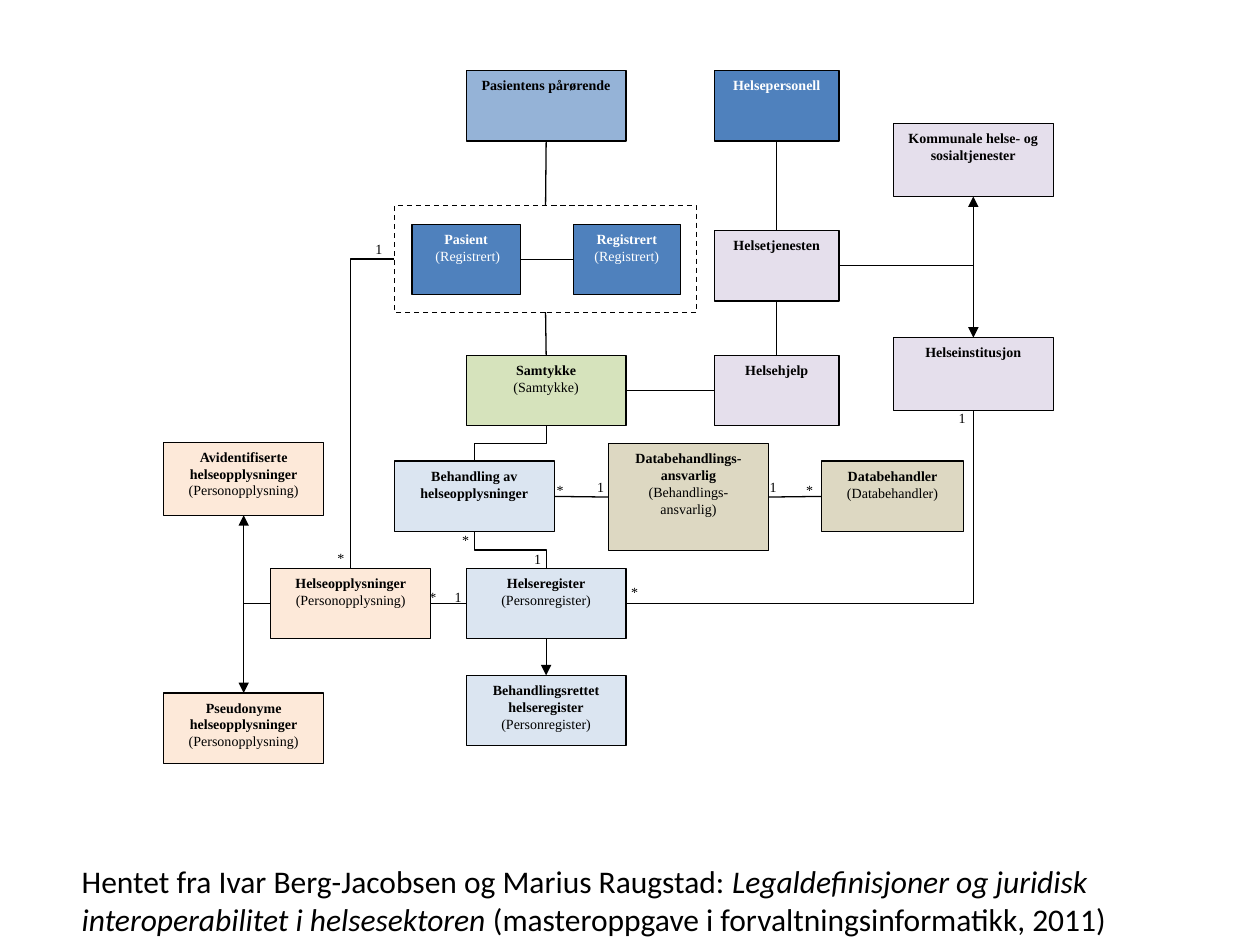
import pptx
import pptx.util
import pptx.dml.color
import pptx.enum.dml
import pptx.enum.shapes
import pptx.enum.text
import pptx.oxml
import pptx.oxml.ns

Inches = pptx.util.Inches
Pt = pptx.util.Pt
TOP, LEFT, BOTTOM, RIGHT = range(4)
COLORS = {
    "black": "000000", "white": "FFFFFF", "blue": "4F81BD", "sky": "95B3D7",
    "pale": "DBE5F1", "peach": "FDE9D9", "sand": "DDD8C2", "lilac": "E5DFEC",
    "green": "D6E3BC",
}
WIDE, MID, HIGH = 1.27, 0.99, 0.56

NODES = {
    "patient": (1.97, 1.22, 0.86, HIGH, "blue", "Pasient", " (Registrert)"),
    "data": (0.85, 3.95, WIDE, HIGH, "peach", "Helseopplysninger", "(Personopplysning)"),
    "masked": (0, 2.95, WIDE, 0.58, "peach", "Avidentifiserte helseopplysninger", "(Personopplysning)"),
    "pseudo": (0, 4.94, WIDE, HIGH, "peach", "Pseudonyme helseopplysninger", "(Personopplysning)"),
    "treatment": (2.4, 4.8, WIDE, HIGH, "pale", "Behandlingsrettet helseregister", "(Personregister)"),
    "index": (2.4, 3.95, WIDE, HIGH, "pale", "Helseregister", "(Personregister)"),
    "agent": (5.22, 3.1, 1.13, HIGH, "sand", "Databehandler", "(Databehandler)"),
    "service": (4.37, 1.27, MID, HIGH, "lilac", "Helsetjenesten", ""),
    "clinic": (5.79, 2.12, WIDE, 0.58, "lilac", "Helseinstitusjon", ""),
    "local": (5.79, 0.42, WIDE, 0.58, "lilac", "Kommunale helse- og sosialtjenester", ""),
    "staff": (4.37, 0, MID, HIGH, "blue", "Helsepersonell", ""),
    "kin": (2.4, 0, WIDE, HIGH, "sky", "Pasientens pårørende", ""),
    "help": (4.37, 2.26, MID, HIGH, "lilac", "Helsehjelp", ""),
    "consent": (2.4, 2.26, WIDE, HIGH, "green", "Samtykke", "(Samtykke)"),
    "process": (1.83, 3.1, WIDE, HIGH, "pale", "Behandling av helseopplysninger", ""),
    "subject": (3.25, 1.22, 0.85, HIGH, "blue", "Registrert", "(Registrert)"),
    "frame": (1.83, 1.07, 2.4, 0.85, None, "", ""),
    "owner": (3.53, 2.96, WIDE, 0.85, "sand", "Databehandlings-ansvarlig", "(Behandlings-ansvarlig)"),
}

LINKS = [
    ("index", RIGHT, "clinic", BOTTOM, "corner", False),
    ("index", BOTTOM, "treatment", TOP, "line", True),
    ("index", LEFT, "data", RIGHT, "line", False),
    ("service", RIGHT, "clinic", TOP, "corner", True),
    ("service", RIGHT, "local", BOTTOM, "corner", True),
    ("service", TOP, "staff", BOTTOM, "line", False),
    ("frame", BOTTOM, "consent", TOP, "line", False),
    ("consent", BOTTOM, "process", TOP, "step", False),
    ("process", BOTTOM, "index", TOP, "step", False),
    ("consent", RIGHT, "help", LEFT, "line", False),
    ("service", BOTTOM, "help", TOP, "line", False),
    ("data", LEFT, "masked", BOTTOM, "corner", True),
    ("data", LEFT, "pseudo", TOP, "corner", True),
    ("kin", BOTTOM, "frame", TOP, "line", False),
    ("frame", LEFT, "data", TOP, "corner", False),
    ("process", RIGHT, "owner", LEFT, "line", False),
    ("owner", RIGHT, "agent", LEFT, "line", False),
    ("patient", RIGHT, "subject", LEFT, "line", False),
]

MARKS = {
    "1": [(6.21, 2.64), (2.21, 4.06), (2.84, 3.76), (3.34, 3.19), (1.58, 1.3), (4.71, 3.19)],
    "*": [(3.61, 4.02), (2.01, 4.06), (2.27, 3.61), (3.02, 3.21), (1.28, 3.75), (5.0, 3.21)],
}


def rgb(name):
    return pptx.dml.color.RGBColor.from_string(COLORS[name])


def add_run(para, text, font, size, color="black", bold=False, italic=False):
    run = para.add_run()
    run.text = text
    run.font.name = font
    run.font.size = Pt(size)
    run.font.bold = bold
    run.font.italic = italic
    run.font.color.rgb = rgb(color)


def add_node(slide, x, y, w, h, fill, title, term):
    node = slide.shapes.add_shape(
        pptx.enum.shapes.MSO_SHAPE.RECTANGLE, Inches(x), Inches(y), Inches(w), Inches(h))
    node.shadow.inherit = False
    node.line.color.rgb = rgb("black")
    node.line.width = Pt(0.75)
    if fill is None:
        node.fill.background()
        node.line.dash_style = pptx.enum.dml.MSO_LINE.DASH
        return node
    node.fill.solid()
    node.fill.fore_color.rgb = rgb(fill)
    frame = node.text_frame
    frame.word_wrap = True
    frame.vertical_anchor = pptx.enum.text.MSO_ANCHOR.TOP
    color = "white" if fill == "blue" else "black"
    for i, text in enumerate(filter(None, (title, term))):
        para = frame.add_paragraph() if i else frame.paragraphs[0]
        para.alignment = pptx.enum.text.PP_ALIGN.CENTER
        add_run(para, text, "Times New Roman", 8, color, bold=(i == 0))
    return node


def turn_step(link):
    x1, y1, x2, y2 = link.begin_x, link.begin_y, link.end_x, link.end_y
    mid_x, mid_y = (x1 + x2) // 2, (y1 + y2) // 2
    half_w, half_h = (x2 - x1) // 2, (y2 - y1) // 2
    link.begin_x, link.end_x = mid_x - half_h, mid_x + half_h
    link.begin_y, link.end_y = mid_y + half_w, mid_y - half_w
    link.element.spPr.find(pptx.oxml.ns.qn("a:xfrm")).set("rot", "5400000")


def add_link(slide, start, side, end, goal, kind, arrow):
    types = pptx.enum.shapes.MSO_CONNECTOR
    link = slide.shapes.add_connector(
        types.STRAIGHT if kind == "line" else types.ELBOW, 0, 0, 0, 0)
    link.begin_connect(start, side)
    link.end_connect(end, goal)
    link.line.color.rgb = rgb("black")
    link.line.width = Pt(0.75)
    props = link.element.spPr
    if kind == "corner":
        props.find(pptx.oxml.ns.qn("a:prstGeom")).set("prst", "bentConnector2")
    if kind == "step":
        turn_step(link)
    if arrow:
        tail = pptx.oxml.parse_xml(f'<a:tailEnd {pptx.oxml.ns.nsdecls("a")} type="triangle"/>')
        props.find(pptx.oxml.ns.qn("a:ln")).append(tail)
    props.append(pptx.oxml.parse_xml(f'<a:effectLst {pptx.oxml.ns.nsdecls("a")}/>'))


def add_text(slide, x, y, w, h, wrap):
    box = slide.shapes.add_textbox(Inches(x), Inches(y), Inches(w), Inches(h))
    box.text_frame.word_wrap = wrap
    return box.text_frame


def draw_model(slide, left, top):
    nodes = {
        key: add_node(slide, left + x, top + y, *rest)
        for key, (x, y, *rest) in NODES.items()
    }
    for start, side, end, goal, kind, arrow in LINKS:
        add_link(slide, nodes[start], side, nodes[end], goal, kind, arrow)
    for mark, spots in MARKS.items():
        for x, y in spots:
            frame = add_text(slide, left + x, top + y, 0.32, 0.32, True)
            add_run(frame.paragraphs[0], mark, "Times New Roman", 8)


def draw_credit(slide, left, top, width, height):
    frame = add_text(slide, left, top, width, height, False)
    frame.auto_size = pptx.enum.text.MSO_AUTO_SIZE.SHAPE_TO_FIT_TEXT
    lines = [
        [("Hentet fra Ivar Berg-Jacobsen og Marius Raugstad: ", False),
         ("Legaldefinisjoner og juridisk", True)],
        [("interoperabilitet i helsesektoren ", True),
         ("(masteroppgave i forvaltningsinformatikk, 2011)", False)],
    ]
    for i, line in enumerate(lines):
        para = frame.add_paragraph() if i else frame.paragraphs[0]
        for text, italic in line:
            add_run(para, text, "Calibri", 18, italic=italic)


def main():
    deck = pptx.Presentation()
    deck.slide_width, deck.slide_height = Inches(10), Inches(7.5)
    slide = deck.slides.add_slide(deck.slide_layouts[6])
    draw_model(slide, 1.3, 0.56)
    draw_credit(slide, 0.55, 6.79, 8.38, 0.71)
    deck.save("out.pptx")


if __name__ == "__main__":
    main()
